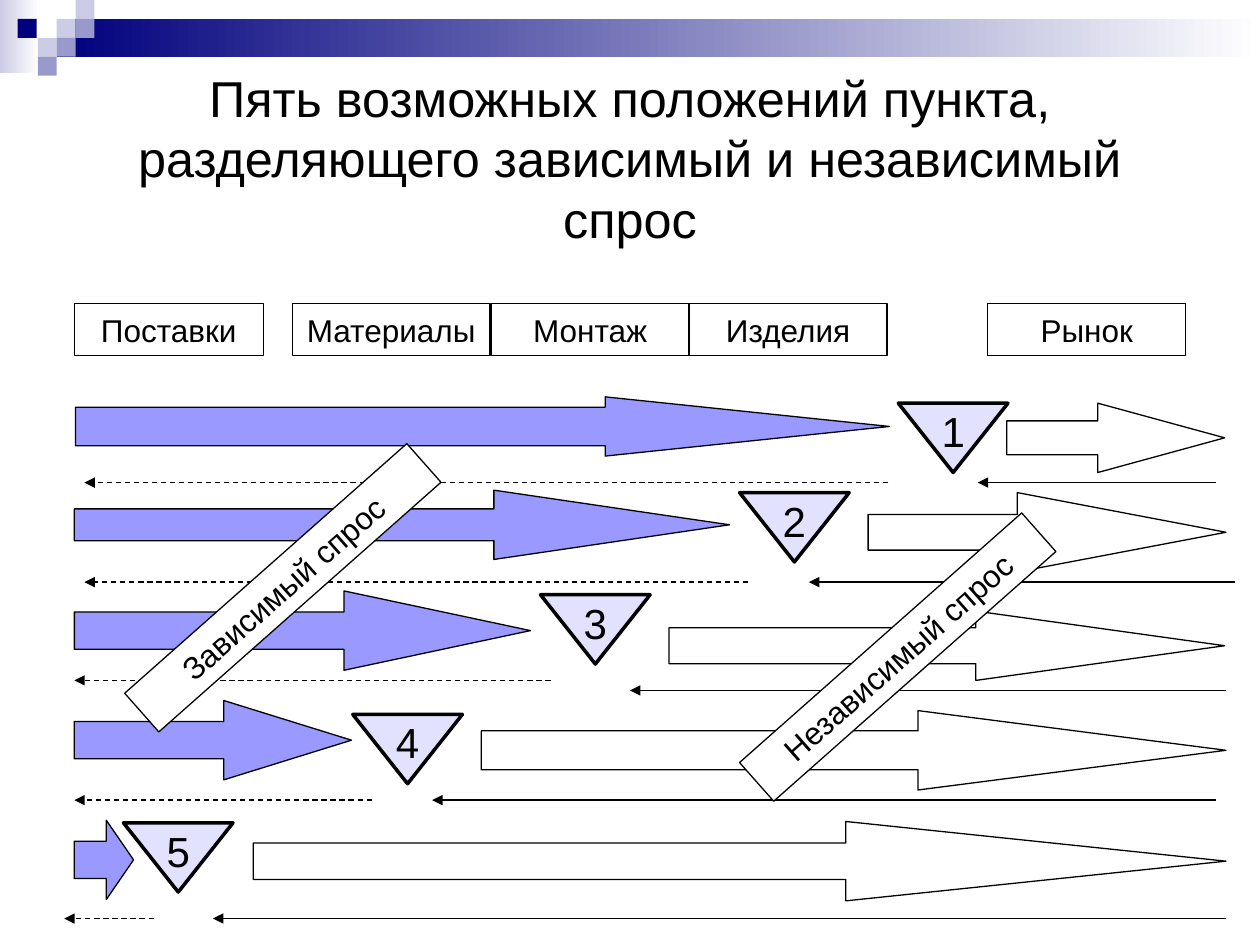
from lxml.etree import SubElement
from pptx import Presentation
from pptx.dml.color import RGBColor
from pptx.enum.dml import MSO_LINE
from pptx.enum.shapes import MSO_CONNECTOR, MSO_SHAPE
from pptx.enum.text import MSO_ANCHOR, PP_ALIGN
from pptx.oxml.ns import qn
from pptx.util import Inches, Pt

COLORS = {"black": "000000", "white": "FFFFFF", "navy": "00007D", "slate": "9999CC",
          "pale": "CCCCE6", "violet": "9999FF"}
FONT = "Arial"
TITLE = "Пять возможных положений пункта, разделяющего зависимый и независимый спрос"

BANDS = [((0, 0, 0.31, 0.58), "pale"), ((0.45, 0.15, 9.55, 0.3), "navy")]
SQUARE = 0.15
SQUARES = [(0.45, 0.15, "pale"), (0.6, 0, "pale"), (0.6, 0.15, "slate"), (0.3, 0.3, "pale"),
           (0.14, 0.15, "navy"), (0.45, 0.3, "slate"), (0.3, 0.45, "slate")]

STAGE_TOP, STAGE_HEIGHT = 2.41, 0.41
STAGES = [("Поставки", 0.59, 1.5), ("Материалы", 2.32, 1.57), ("Монтаж", 3.9, 1.57),
          ("Изделия", 5.47, 1.57), ("Рынок", 7.84, 1.57)]

# Each arrow: box, then shaft and head adjustments. Each flow: y, start x, end x.
ROWS = [
    {"point": (7.13, 3.2),
     "dependent": ((0.6, 3.15, 6.46, 0.47), (0.65, 4.8)),
     "independent": ((7.99, 3.2, 1.73, 0.55), (0.49, 1.83)),
     "dashed": (3.83, 7.05, 0.67), "solid": (3.83, 9.65, 7.76)},
    {"point": (5.87, 3.91),
     "dependent": ((0.59, 3.89, 5.2, 0.55), (0.46, 3.4)),
     "independent": ((6.89, 3.91, 2.84, 0.63), (0.45, 2.63)),
     "dashed": (4.62, 5.94, 0.67), "solid": (4.62, 9.8, 6.42)},
    {"point": (4.29, 4.72),
     "dependent": ((0.59, 4.69, 3.62, 0.63), (0.47, 2.35)),
     "independent": ((5.31, 4.85, 4.41, 0.55), (0.52, 3.59)),
     "dashed": (5.4, 4.37, 0.59), "solid": (5.48, 9.73, 5)},
    {"point": (2.8, 5.67),
     "dependent": ((0.59, 5.56, 2.2, 0.63), (0.47, 1.61)),
     "independent": ((3.82, 5.64, 5.91, 0.63), (0.49, 3.88)),
     "dashed": (6.35, 2.95, 0.59), "solid": (6.35, 9.65, 3.43)},
    {"point": (0.98, 6.53),
     "dependent": ((0.59, 6.51, 0.47, 0.63), (0.47, 0.46)),
     "independent": ((2.01, 6.52, 7.72, 0.63), (0.46, 4.79)),
     "dashed": (7.29, 1.22, 0.51), "solid": (7.29, 9.73, 1.69)},
]
POINT_WIDTH, POINT_HEIGHT = 0.87, 0.55
NUMBER_WIDTH, NUMBER_HEIGHT = 0.39, 0.5
BANNERS = [("Независимый спрос", (5.63, 5.01, 2.99, 0.41)),
           ("Зависимый спрос", (0.75, 4.46, 2.99, 0.41))]
BANNER_ROTATION = -41.5


def color(name):
    return RGBColor.from_string(COLORS[name])


def write(shape, text, size):
    frame = shape.text_frame
    frame.word_wrap = True
    frame.vertical_anchor = MSO_ANCHOR.MIDDLE
    paragraph = frame.paragraphs[0]
    paragraph.alignment = PP_ALIGN.CENTER
    run = paragraph.add_run()
    run.text = text
    for attribute, value in {"name": FONT, "size": Pt(size), "bold": False}.items():
        setattr(run.font, attribute, value)
    run.font.color.rgb = color("black")


def add_box(slide, kind, box, fill=None, line_width=None):
    shape = slide.shapes.add_shape(kind, *map(Inches, box))
    shape.shadow.inherit = False
    if fill:
        shape.fill.solid()
        shape.fill.fore_color.rgb = color(fill)
    else:
        shape.fill.background()
    if line_width:
        shape.line.color.rgb = color("black")
        shape.line.width = Pt(line_width)
    else:
        shape.line.fill.background()
    return shape


def add_arrow(slide, box, adjustments, fill=None):
    arrow = add_box(slide, MSO_SHAPE.RIGHT_ARROW, box, fill, 0.75)
    for index, value in enumerate(adjustments):
        arrow.adjustments[index] = value


def add_flow(slide, y, start, end, dashed=False):
    connector = slide.shapes.add_connector(
        MSO_CONNECTOR.STRAIGHT, Inches(start), Inches(y), Inches(end), Inches(y))
    connector.line.color.rgb = color("black")
    connector.line.width = Pt(0.75)
    if dashed:
        connector.line.dash_style = MSO_LINE.DASH
    SubElement(connector.line._get_or_add_ln(), qn("a:tailEnd"), type="triangle")
    SubElement(connector._element.spPr, qn("a:effectLst"))


def add_point(slide, number, left, top):
    """Add the numbered triangle where dependent demand meets independent demand."""
    triangle = add_box(slide, MSO_SHAPE.FLOWCHART_MERGE,
                       (left, top, POINT_WIDTH, POINT_HEIGHT), "violet", 2)
    fill_color = triangle._element.spPr.find(qn("a:solidFill"))[0]
    SubElement(fill_color, qn("a:alpha"), val="28000")
    label = slide.shapes.add_textbox(
        Inches(left + (POINT_WIDTH - NUMBER_WIDTH) / 2), Inches(top - 0.03),
        Inches(NUMBER_WIDTH), Inches(NUMBER_HEIGHT))
    write(label, str(number), 24)


def add_decoration(slide):
    for box, start in BANDS:
        fill = add_box(slide, MSO_SHAPE.RECTANGLE, box).fill
        fill.gradient()
        fill.gradient_angle = 0
        for stop, name in zip(fill.gradient_stops, (start, "white")):
            stop.color.rgb = color(name)
    for left, top, name in SQUARES:
        add_box(slide, MSO_SHAPE.RECTANGLE, (left, top, SQUARE, SQUARE), name)


def main():
    presentation = Presentation()
    presentation.slide_width, presentation.slide_height = Inches(10), Inches(7.5)
    slide = presentation.slides.add_slide(presentation.slide_layouts[5])
    add_decoration(slide)

    title = slide.shapes.title
    for side, value in {"left": 0.5, "top": 0.5, "width": 9, "height": 1.5}.items():
        setattr(title, side, Inches(value))
    write(title, TITLE, 28.8)

    for text, left, width in STAGES:
        box = (left, STAGE_TOP, width, STAGE_HEIGHT)
        write(add_box(slide, MSO_SHAPE.RECTANGLE, box, line_width=0.75), text, 18)

    for number, row in enumerate(ROWS, 1):
        add_flow(slide, *row["dashed"], dashed=True)
        add_flow(slide, *row["solid"])
        add_arrow(slide, *row["dependent"], fill="violet")
        add_arrow(slide, *row["independent"])
        add_point(slide, number, *row["point"])

    for text, box in BANNERS:
        banner = add_box(slide, MSO_SHAPE.RECTANGLE, box, "white", 0.75)
        banner.rotation = BANNER_ROTATION
        write(banner, text, 18)

    presentation.save("out.pptx")


if __name__ == "__main__":
    main()
